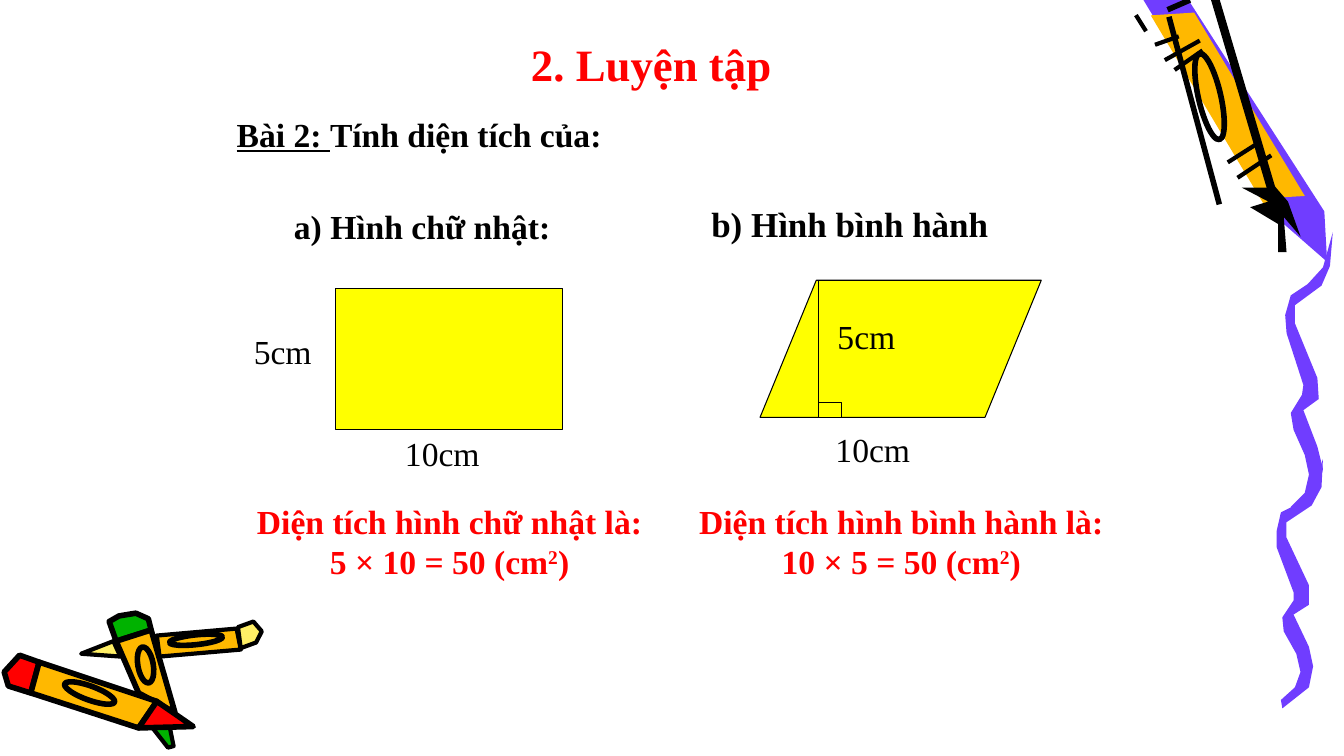
import pptx
import pptx.util
import pptx.dml.color
import pptx.enum.shapes
import pptx.enum.text
import pptx.oxml

Pt = pptx.util.Pt
SHAPE = pptx.enum.shapes.MSO_SHAPE
ALIGN = pptx.enum.text.PP_ALIGN
ANCHOR = pptx.enum.text.MSO_ANCHOR
FIT = pptx.enum.text.MSO_AUTO_SIZE

FONT = "Times New Roman"
COLORS = {
    "black": "000000", "red": "FF0000", "yellow": "FFFF00", "purple": "703DFF",
    "orange": "FFB800", "cream": "FFEF66", "green": "00B200",
}

# Outlines: colour, border width, corners in points
CRAYON = [
    ("purple", 0, [(815, -3), (909, 153), (948, 187), (946, 151), (847, -3)]),
    ("orange", 0, [(904, 148), (915, 141), (932, 140), (853, 9), (822, 11)]),
    ("black", 0, [(902, 123), (920, 144), (929, 169), (917, 155), (919, 180), (913, 180),
                  (913, 160), (893, 148), (906, 144), (887, 134), (906, 134)]),
]
PENCILS = [
    ("cream", 3, [(81, 458), (58, 467), (86, 469)]),
    ("orange", 3, [(112, 454), (169, 449), (172, 464), (114, 469)]),
    ("cream", 3, [(170, 448), (181, 444), (187, 451), (183, 459), (172, 463)]),
    ("green", 4, [(78, 444), (85, 440), (97, 438), (106, 442), (108, 450), (83, 458)]),
    ("orange", 4, [(83, 458), (108, 450), (125, 509), (99, 495)]),
    ("green", 3, [(109, 520), (120, 534), (124, 533), (121, 518)]),
    ("red", 4, [(14, 468), (28, 473), (22, 495), (6, 490), (3, 480)]),
    ("orange", 4, [(28, 473), (112, 501), (99, 520), (22, 495)]),
    ("red", 4, [(112, 501), (138, 519), (99, 520)]),
]
SQUIGGLE = [
    (5, 239), (19, 227), (24, 211), (20, 193), (8, 171), (6, 157), (17, 141), (18, 132),
    (1, 88), (0, 72), (5, 54), (22, 45), (37, 30), (47, 0), (45, 29), (36, 46), (10, 63),
    (10, 79), (32, 126), (33, 145), (18, 155), (32, 186), (37, 206), (32, 227), (6, 248),
]
# Squiggle pieces: left, top, vertical stretch
SQUIGGLE_PIECES = [(911.5, 327.6, 0.72), (918, 166.3, 0.82)]

# Pen strokes: x1, y1, x2, y2, width
STROKES = [
    (811.4, 10.8, 818.6, 22.3, 3),
    (835, 12, 871, 146, 4),
    (867, -4, 912, 148, 6),
    (834, 7, 850, 0, 4),
    (825, 32, 842, 26, 3),
    (832, 43, 857, 29, 3),
    (839, 50, 859, 36, 3),
    (877, 116, 899, 102, 3),
    (884, 127, 908, 111, 3),
]
# Rings: centre x, centre y, width, height, rotation
RINGS = [
    (864, 69, 16, 63, -13),
    (140, 457, 38, 7, -6),
    (104, 475, 11, 26, -10),
    (64, 495, 38, 10, 20),
]

# Figures: preset, left, top, width, height
FIGURES = [
    (SHAPE.FLOWCHART_DATA, 542.9, 200.2, 200.9, 97.9),
    (SHAPE.RECTANGLE, 584.6, 287.3, 16.6, 10.8),
    (SHAPE.FLOWCHART_PROCESS, 239.8, 205.9, 162, 100.8),
]
HEIGHT_LINE = (584.6, 200.2, 584.6, 298.1)

# Headings: text, size, left, top, width, height
HEADINGS = [
    ("b) Hình bình hành", 25, 517, 140.4, 180, 38.2),
    ("a) Hình chữ nhật: ", 24, 228.2, 140.4, 152.6, 42.5),
]
MEASURES = [
    ("5cm", 591.1, 221.8), ("10cm", 589.7, 303.1),
    ("5cm", 174.2, 232.6), ("10cm", 282.2, 306),
]
TITLE = ("2. Luyện tập", 372.2, 23, 198, 46)
TASK = (["Bài 2: ", "Tính diện tích của:"], 162, 77.8, 552.2, 36)
ANSWERS = [
    ("Diện tích hình chữ nhật là:", "5 × 10 = 50 (cm", 162),
    ("Diện tích hình bình hành là:", "10 × 5 = 50 (cm", 484.6),
]


def rgb(name):
    return pptx.dml.color.RGBColor.from_string(COLORS[name])


def style(sp, fill, border):
    """Set fill and black border; None or 0 leaves that part out."""
    sp.shadow.inherit = False
    if fill:
        sp.fill.solid()
        sp.fill.fore_color.rgb = rgb(fill)
    else:
        sp.fill.background()
    if border:
        sp.line.color.rgb = rgb("black")
        sp.line.width = Pt(border)
    else:
        sp.line.fill.background()


def draw_outline(fill, border, corners):
    builder = slide.shapes.build_freeform(*corners[0], scale=Pt(1))
    builder.add_line_segments(corners[1:], close=True)
    style(builder.convert_to_shape(), fill, border)


def draw_line(x1, y1, x2, y2, width):
    cn = slide.shapes.add_connector(
        pptx.enum.shapes.MSO_CONNECTOR.STRAIGHT, Pt(x1), Pt(y1), Pt(x2), Pt(y2))
    cn.line.color.rgb = rgb("black")
    cn.line.width = Pt(width)
    effects = '<a:effectLst xmlns:a="http://schemas.openxmlformats.org/drawingml/2006/main"/>'
    cn._element.spPr.append(pptx.oxml.parse_xml(effects))


def draw_preset(preset, box, fill, border):
    sp = slide.shapes.add_shape(preset, *map(Pt, box))
    style(sp, fill, border)
    return sp


def add_text(paragraphs, box, size=24, color="black", bold=True, centred=False, wrap=True):
    """Add a text box from lists of run texts, one list per paragraph."""
    tf = slide.shapes.add_textbox(*map(Pt, box)).text_frame
    tf.word_wrap = wrap
    tf.auto_size = FIT.SHAPE_TO_FIT_TEXT if wrap else FIT.NONE
    tf.vertical_anchor = ANCHOR.TOP if wrap else ANCHOR.MIDDLE
    for i, texts in enumerate(paragraphs):
        p = tf.add_paragraph() if i else tf.paragraphs[0]
        p.alignment = ALIGN.CENTER if centred else ALIGN.LEFT
        for text in texts:
            r = p.add_run()
            r.text = text
            r.font.name = FONT
            r.font.size = Pt(size)
            r.font.bold = bold
            r.font.color.rgb = rgb(color)
    return tf


prs = pptx.Presentation()
prs.slide_width, prs.slide_height = Pt(960), Pt(540)
slide = prs.slides.add_slide(prs.slide_layouts[6])

for outline in CRAYON + PENCILS:
    draw_outline(*outline)
for left, top, stretch in SQUIGGLE_PIECES:
    draw_outline("purple", 0, [(left + 0.72 * x, top + stretch * y) for x, y in SQUIGGLE])
for stroke in STROKES:
    draw_line(*stroke)
for x, y, w, h, turn in RINGS:
    ring = draw_preset(SHAPE.OVAL, (x - w / 2, y - h / 2, w, h), None, 4)
    ring.rotation = turn

for preset, *box in FIGURES:
    draw_preset(preset, box, "yellow", 0.75)
draw_line(*HEIGHT_LINE, 0.75)

for text, size, *box in HEADINGS:
    add_text([[text]], box, size, centred=True, wrap=False)
for text, left, top in MEASURES:
    add_text([[text]], (left, top, 90, 36), bold=False)

add_text([[TITLE[0]]], TITLE[1:], 32, "red")
tf = add_text([TASK[0]], TASK[1:])
tf.paragraphs[0].runs[0].font.underline = True

for label, sum_text, left in ANSWERS:
    tf = add_text([[label], [sum_text, "2", ")"]], (left, 354.2, 318.2, 65.5),
                  color="red", centred=True)
    tf.paragraphs[1].runs[1].font._element.set("baseline", "30000")

prs.save("out.pptx")
